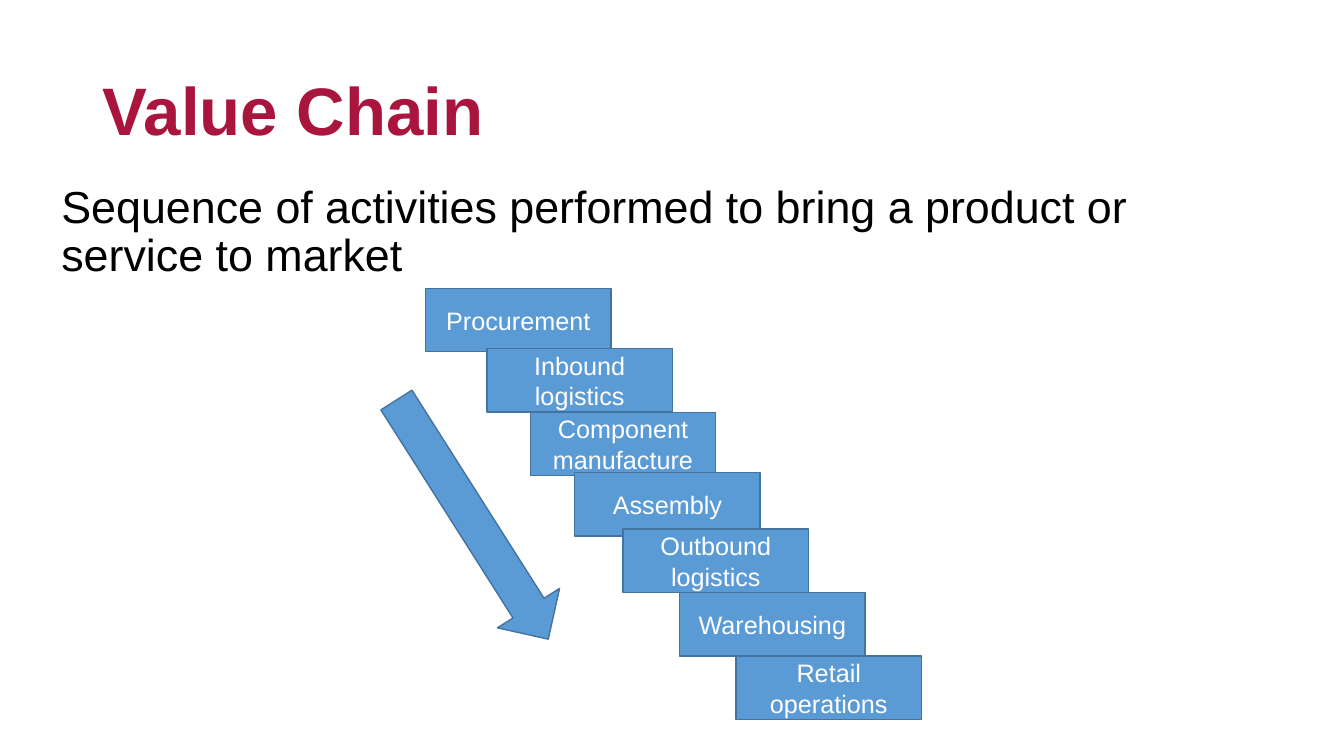
from pptx import Presentation
from pptx.dml.color import RGBColor
from pptx.enum.shapes import MSO_SHAPE
from pptx.enum.text import MSO_ANCHOR, PP_ALIGN
from pptx.util import Inches, Pt

CRIMSON = RGBColor(0xAA, 0x15, 0x3D)
BLACK = RGBColor(0, 0, 0)
WHITE = RGBColor(255, 255, 255)
BLUE = RGBColor(0x5B, 0x9B, 0xD5)
DARK_BLUE = RGBColor(0x43, 0x73, 0x9E)

STAGES = [
    ("Procurement", 4.22, 2.86),
    ("Inbound logistics", 4.83, 3.46),
    ("Component manufacture", 5.26, 4.09),
    ("Assembly", 5.7, 4.69),
    ("Outbound logistics", 6.18, 5.25),
    ("Warehousing", 6.74, 5.88),
    ("Retail operations", 7.3, 6.51),
]


def write_text(box, text, size, color, anchor):
    """Fill a box with one wrapped Arial paragraph and return it."""
    frame = box.text_frame
    frame.word_wrap = True
    frame.vertical_anchor = anchor
    paragraph = frame.paragraphs[0]
    paragraph.text = text
    paragraph.font.name = "Arial"
    paragraph.font.size = Pt(size)
    paragraph.font.color.rgb = color
    return paragraph


def add_text(page, bounds, text, size, color, anchor):
    """Add a text box with tight line spacing and return its paragraph."""
    box = page.shapes.add_textbox(*map(Inches, bounds))
    paragraph = write_text(box, text, size, color, anchor)
    paragraph.line_spacing = 0.9
    return paragraph


def add_blue_shape(page, kind, bounds):
    """Add a blue outlined preset shape."""
    shape = page.shapes.add_shape(kind, *map(Inches, bounds))
    shape.shadow.inherit = False
    shape.fill.solid()
    shape.fill.fore_color.rgb = BLUE
    shape.line.color.rgb = DARK_BLUE
    shape.line.width = Pt(1)
    return shape


def add_stage(page, name, left, top):
    """Add one labelled step of the chain."""
    box = add_blue_shape(page, MSO_SHAPE.RECTANGLE, (left, top, 1.84, 0.63))
    paragraph = write_text(box, name, 18, WHITE, MSO_ANCHOR.MIDDLE)
    paragraph.alignment = PP_ALIGN.CENTER


def main():
    """Build the value chain slide and save it."""
    deck = Presentation()
    deck.slide_width = Inches(13.33)
    deck.slide_height = Inches(7.5)
    page = deck.slides.add_slide(deck.slide_layouts[6])

    title = add_text(page, (0.92, 0.4, 9.71, 1.45), "Value Chain",
                     48, CRIMSON, MSO_ANCHOR.MIDDLE)
    title.font.bold = True
    definition = add_text(
        page, (0.51, 1.78, 11.79, 4.46),
        "Sequence of activities performed to bring a product or service to market",
        32, BLACK, MSO_ANCHOR.TOP)
    definition.space_before = Pt(10)

    arrow = add_blue_shape(page, MSO_SHAPE.DOWN_ARROW, (4.32, 3.75, 0.73, 2.81))
    arrow.rotation = 327.6
    for name, left, top in STAGES:
        add_stage(page, name, left, top)

    deck.save("out.pptx")


if __name__ == "__main__":
    main()
